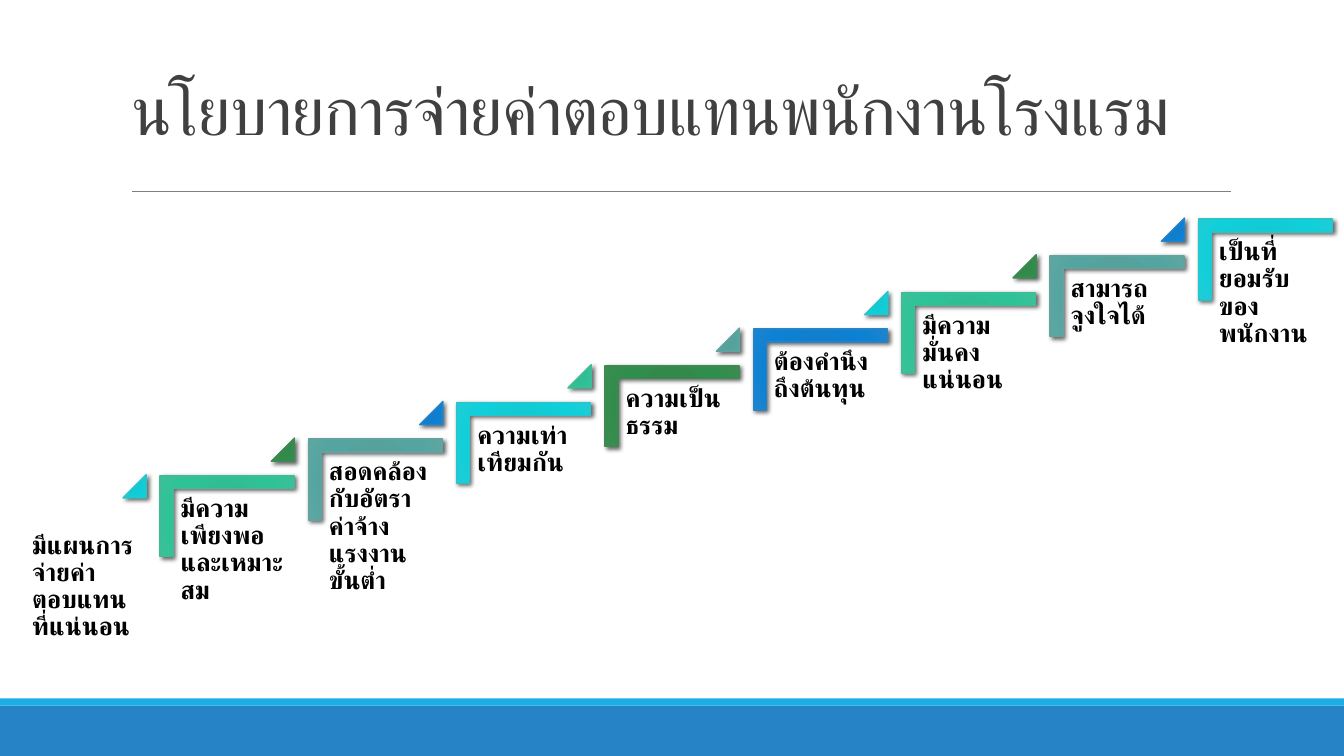
import dataclasses

import lxml.etree
import pptx
import pptx.dml.color
import pptx.enum.shapes
import pptx.enum.text
import pptx.oxml
import pptx.oxml.ns
import pptx.util

Inches = pptx.util.Inches
Pt = pptx.util.Pt
Shape = pptx.enum.shapes.MSO_SHAPE
Anchor = pptx.enum.text.MSO_ANCHOR

COLOURS = {
    "footer": "2683C6",
    "footer_edge": "1CADE4",
    "rule": "808080",
    "title": "404040",
    "label": "000000",
    "shadow": "000000",
}
STAIR_COLOURS = {
    "cyan": ("0ECBD5", "12CAD3", "0FD0DA", "20CBD4", "28C4CC"),
    "mint": ("2DBE94", "30BD94", "2EC397", "3CC09A", "42BA97"),
    "forest": ("2F8949", "32894A", "318D4B", "3A8C51", "3E8853"),
    "teal": ("52A19C", "55A19C", "54A5A0", "5FA6A2", "62A39F"),
    "blue": ("0D7ECF", "117ECD", "0D81D4", "1E84CE", "2683C6"),
}
STOPS = (0, 34, 70, 100)
POLICIES = (
    "มีแผนการจ่ายค่าตอบแทนที่แน่นอน",
    "มีความเพียงพอและเหมาะสม",
    "สอดคล้องกับอัตราค่าจ้างแรงงานขั้นต่ำ",
    "ความเท่าเทียมกัน",
    "ความเป็นธรรม",
    "ต้องคำนึงถึงต้นทุน",
    "มีความมั่นคงแน่นอน",
    "สามารถจูงใจได้",
    "เป็นที่ยอมรับของพนักงาน",
)
FIRST_LEFT, FIRST_TOP = 0.25, 5.21
LAST_LEFT, LAST_TOP = 12.02, 2.3
STEP_RIGHT = (LAST_LEFT - FIRST_LEFT) / (len(POLICIES) - 1)
STEP_UP = (FIRST_TOP - LAST_TOP) / (len(POLICIES) - 1)


@dataclasses.dataclass(frozen=True)
class Part:
    kind: Shape
    dx: float
    dy: float
    width: float
    height: float
    rotation: float
    adjustments: tuple[float, ...]


@dataclasses.dataclass(frozen=True)
class Band:
    top: float
    height: float
    colour: str


CORNER = Part(Shape.CORNER, 0.13, -0.39, 0.8, 1.33, 90, (0.16, 0.16))
TRIANGLE = Part(Shape.ISOSCELES_TRIANGLE, 0.97, -0.5, 0.23, 0.23, 0, (1,))
BANDS = (Band(7, 0.5, "footer"), Band(6.93, 0.07, "footer_edge"))


def rgb(colour: str) -> pptx.dml.color.RGBColor:
    return pptx.dml.color.RGBColor.from_string(colour)


def apply(target: object, values: dict[str, object]) -> None:
    for name, value in values.items():
        setattr(target, name, value)


def write(frame, text: str, frame_format: dict, line_spacing: float,
          font_format: dict, colour: str):
    apply(frame, {"word_wrap": True, "auto_size": pptx.enum.text.MSO_AUTO_SIZE.NONE,
                  **frame_format})
    para = frame.paragraphs[0]
    apply(para, {"line_spacing": line_spacing,
                 "alignment": pptx.enum.text.PP_ALIGN.LEFT})
    span = para.add_run()
    span.text = text
    apply(span.font, {"name": "Calibri", **font_format})
    span.font.color.rgb = rgb(COLOURS[colour])
    return span


def add_band(page, band: Band) -> None:
    box = page.shapes.add_shape(Shape.RECTANGLE, 0, Inches(band.top),
                                Inches(13.33), Inches(band.height))
    box.shadow.inherit = False
    box.fill.solid()
    box.fill.fore_color.rgb = rgb(COLOURS[band.colour])
    box.line.fill.background()


def add_rule(page) -> None:
    rule = page.shapes.add_connector(pptx.enum.shapes.MSO_CONNECTOR.STRAIGHT,
                                     Inches(1.31), Inches(1.9),
                                     Inches(12.21), Inches(1.9))
    rule.line.color.rgb = rgb(COLOURS["rule"])
    rule.line.width = Pt(0.5)
    properties = rule._element.spPr
    lxml.etree.SubElement(properties, pptx.oxml.ns.qn("a:effectLst"))


def add_title(page) -> None:
    title = page.shapes.title
    apply(title, {"left": Inches(1.2), "top": Inches(0.31),
                  "width": Inches(11), "height": Inches(1.22)})
    span = write(title.text_frame, "นโยบายการจ่ายค่าตอบแทนพนักงานโรงแรม",
                 {"vertical_anchor": Anchor.BOTTOM}, 0.85,
                 {"size": Pt(48)}, "title")
    span.font._element.set("spc", "-50")


def add_label(page, text: str, left: float, top: float) -> None:
    box = page.shapes.add_textbox(Inches(left), Inches(top), Inches(1.2), Inches(1.05))
    margins = {f"margin_{side}": Inches(0.07)
               for side in ("left", "top", "right", "bottom")}
    write(box.text_frame, text, {"vertical_anchor": Anchor.TOP, **margins},
          0.9, {"size": Pt(18), "bold": True}, "label")


def add_part(page, part: Part, left: float, top: float, shades: tuple[str, ...]) -> None:
    shape = page.shapes.add_shape(part.kind, Inches(left + part.dx), Inches(top + part.dy),
                                  Inches(part.width), Inches(part.height))
    shape.rotation = part.rotation
    for number, value in enumerate(part.adjustments):
        shape.adjustments[number] = value
    shape.line.color.rgb = rgb(shades[-1])
    shape.line.width = Pt(1)
    space = pptx.oxml.ns.nsdecls("a")
    stops = "".join(f'<a:gs pos="{stop * 1000}"><a:srgbClr val="{shade}"/></a:gs>'
                    for stop, shade in zip(STOPS, shades))
    gradient = pptx.oxml.parse_xml(
        f'<a:gradFill {space} rotWithShape="1"><a:gsLst>{stops}</a:gsLst>'
        '<a:path path="circle"><a:fillToRect l="100000" t="100000" r="100000" b="100000"/>'
        '</a:path></a:gradFill>')
    shadow = pptx.oxml.parse_xml(
        f'<a:effectLst {space}><a:outerShdw blurRad="{Pt(3)}" dist="{Pt(2)}" '
        f'dir="2700000" rotWithShape="0"><a:srgbClr val="{COLOURS["shadow"]}">'
        '<a:alpha val="60000"/></a:srgbClr></a:outerShdw></a:effectLst>')
    properties = shape._element.spPr
    properties.find(pptx.oxml.ns.qn("a:prstGeom")).addnext(gradient)
    properties.append(shadow)


def add_stairs(page) -> None:
    palette = tuple(STAIR_COLOURS.values())
    for step, policy in enumerate(POLICIES):
        left = FIRST_LEFT + step * STEP_RIGHT
        top = FIRST_TOP - step * STEP_UP
        if step > 0:
            add_part(page, CORNER, left, top, palette[(2 * step - 1) % len(palette)])
        add_label(page, policy, left, top)
        if step < len(POLICIES) - 1:
            add_part(page, TRIANGLE, left, top, palette[2 * step % len(palette)])


def main() -> None:
    deck = pptx.Presentation()
    apply(deck, {"slide_width": Inches(13.33), "slide_height": Inches(7.5)})
    page = deck.slides.add_slide(deck.slide_layouts[5])
    for band in BANDS:
        add_band(page, band)
    add_rule(page)
    add_title(page)
    add_stairs(page)
    deck.save("out.pptx")


if __name__ == "__main__":
    main()
